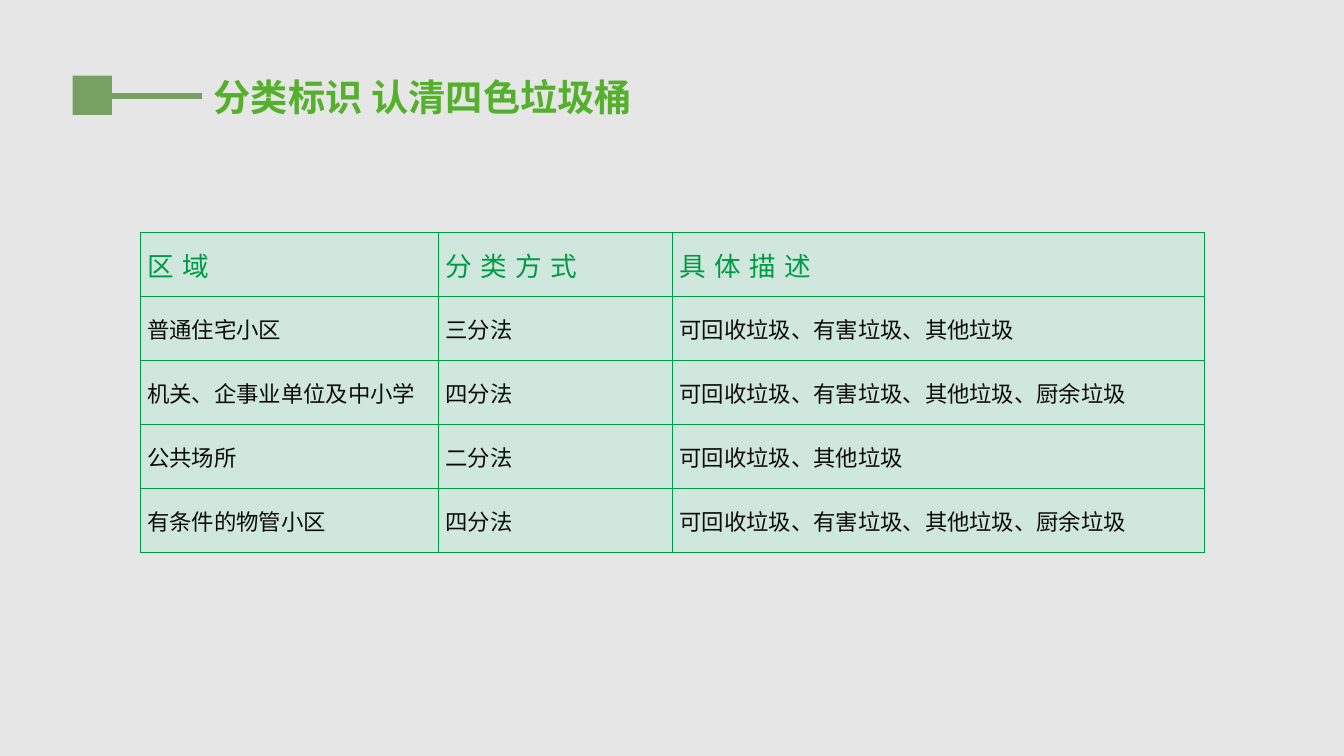
from lxml import etree
from pptx import Presentation
from pptx import util as u
from pptx.dml.color import RGBColor
from pptx.enum import shapes, text
from pptx.oxml import ns

FONT = "Noto Sans CJK SC"
BACKGROUND = RGBColor(0xE6, 0xE6, 0xE6)
MARKER_GREEN = RGBColor(0x77, 0xA1, 0x62)
TITLE_GREEN = RGBColor(0x55, 0xB1, 0x2D)
TABLE_GREEN = RGBColor(0x00, 0x99, 0x44)
CELL_FILL = RGBColor(0xCF, 0xE7, 0xDD)
BODY_TEXT = RGBColor(0x0D, 0x0D, 0x0D)


def add_run(paragraph, wording, color, **font_format):
    """Add a run with the slide font for Latin and East Asian text."""
    run = paragraph.add_run()
    run.text = wording
    run.font.color.rgb = color
    for name, value in {"name": FONT, **font_format}.items():
        setattr(run.font, name, value)
    properties = run._r.get_or_add_rPr()
    etree.SubElement(properties, ns.qn("a:ea"), typeface=FONT)
    return properties


def insert_line(parent, position, tag, color, width):
    """Insert a solid line element, such as a cell border or text outline."""
    line = etree.Element(ns.qn(tag), w=str(u.Pt(width)))
    fill = etree.SubElement(line, ns.qn("a:solidFill"))
    etree.SubElement(fill, ns.qn("a:srgbClr"), val=str(color))
    parent.insert(position, line)


presentation = Presentation()
presentation.slide_width = u.Inches(13.33)
presentation.slide_height = u.Inches(7.5)
slide = presentation.slides.add_slide(presentation.slide_layouts[5])
slide.background.fill.solid()
slide.background.fill.fore_color.rgb = BACKGROUND

# Square marker and the line leading to the title
marker = slide.shapes.add_shape(
    shapes.MSO_SHAPE.RECTANGLE,
    u.Inches(0.72), u.Inches(0.75), u.Inches(0.39), u.Inches(0.39))
marker.shadow.inherit = False
marker.fill.solid()
marker.fill.fore_color.rgb = MARKER_GREEN
marker.line.fill.background()

title_line = slide.shapes.add_connector(
    shapes.MSO_CONNECTOR.STRAIGHT,
    u.Inches(1.11), u.Inches(0.95), u.Inches(2), u.Inches(0.95))
title_line.line.color.rgb = MARKER_GREEN
title_line.line.width = u.Pt(4)
etree.SubElement(title_line._element.spPr, ns.qn("a:effectLst"))

# Title
title = slide.shapes.title
title.left, title.top = u.Inches(2.02), u.Inches(0.69)
title.width, title.height = u.Inches(4.39), u.Inches(0.55)
title_format = {
    "word_wrap": False,
    "auto_size": text.MSO_AUTO_SIZE.SHAPE_TO_FIT_TEXT,
    "vertical_anchor": text.MSO_ANCHOR.TOP,
}
for name, value in title_format.items():
    setattr(title.text_frame, name, value)
title_paragraph = title.text_frame.paragraphs[0]
title_paragraph.alignment = text.PP_ALIGN.LEFT
add_run(title_paragraph, "分类标识 认清四色垃圾桶", TITLE_GREEN,
        size=u.Pt(26.6), bold=True)

# Table of sorting methods by area
THREE_KINDS = "可回收垃圾、有害垃圾、其他垃圾"
FOUR_KINDS = THREE_KINDS + "、厨余垃圾"
sorting_rows = [
    ("区域", "分类方式", "具体描述"),
    ("普通住宅小区", "三分法", THREE_KINDS),
    ("机关、企事业单位及中小学", "四分法", FOUR_KINDS),
    ("公共场所", "二分法", "可回收垃圾、其他垃圾"),
    ("有条件的物管小区", "四分法", FOUR_KINDS),
]
column_widths = [2.96, 2.32, 5.28]
table = slide.shapes.add_table(
    len(sorting_rows), len(column_widths),
    u.Inches(1.39), u.Inches(2.31), u.Inches(10.56), u.Inches(3.17)).table
for column, width in zip(table.columns, column_widths):
    column.width = u.Inches(width)

cell_format = {
    "vertical_anchor": text.MSO_ANCHOR.MIDDLE,
    "margin_left": u.Inches(0.07),
    "margin_right": u.Inches(0.07),
    "margin_top": u.Inches(0.03),
    "margin_bottom": u.Inches(0.03),
}
for row_index, row in enumerate(sorting_rows):
    for column_index, wording in enumerate(row):
        cell = table.cell(row_index, column_index)
        for name, value in cell_format.items():
            setattr(cell, name, value)
        cell.fill.solid()
        cell.fill.fore_color.rgb = CELL_FILL
        cell_properties = cell._tc.get_or_add_tcPr()
        for position, tag in enumerate(("a:lnL", "a:lnR", "a:lnT", "a:lnB")):
            insert_line(cell_properties, position, tag, TABLE_GREEN, 1)

        # Header text is spaced out and outlined
        is_header = row_index == 0
        run_properties = add_run(
            cell.text_frame.paragraphs[0], wording,
            TABLE_GREEN if is_header else BODY_TEXT,
            size=u.Pt(19 if is_header else 16), bold=False)
        if is_header:
            run_properties.set("spc", "600")
            insert_line(run_properties, 0, "a:ln", TABLE_GREEN, 0.75)

presentation.save("out.pptx")
